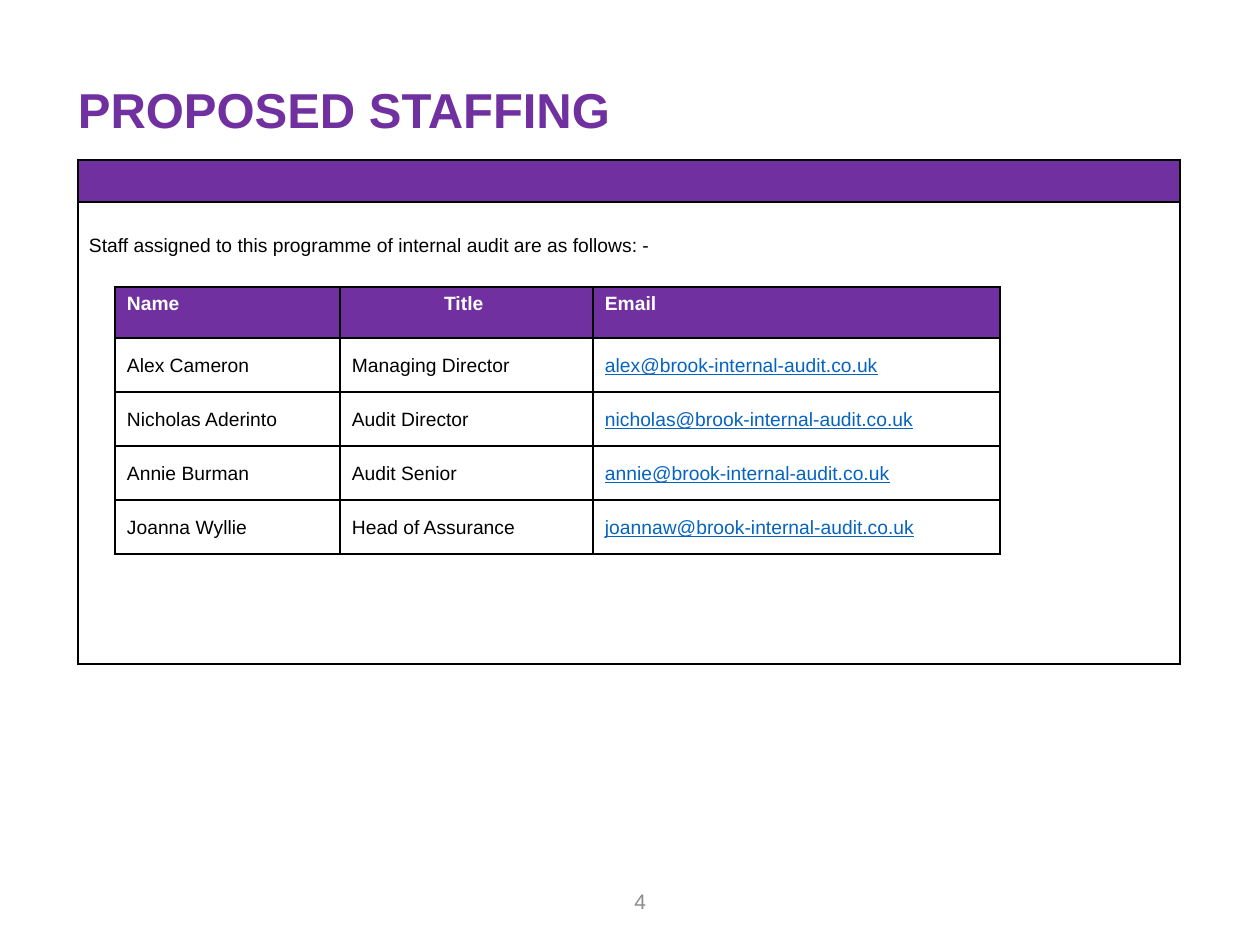
from lxml.etree import SubElement as Sub
from pptx import Presentation
from pptx.dml.color import RGBColor
from pptx.enum.text import MSO_ANCHOR as Anchor, PP_ALIGN as Align
from pptx.oxml.ns import qn
from pptx.util import Pt

SCALE = 914400 / 126
PURPLE, BLACK, WHITE = "7030A0", "000000", "FFFFFF"
GREY, BLUE = "8C8C8C", "0563C1"


def px(n):
    return round(n * SCALE)


def rgb(code):
    return RGBColor.from_string(code)


class Deck:
    font = "Arial"

    def __init__(self, wide, high):
        self.prs = Presentation()
        self.prs.slide_width, self.prs.slide_height = px(wide), px(high)
        self.slide = self.prs.slides.add_slide(self.prs.slide_layouts[6])

    def add_run(self, frame, text, size, color, bold=False, line=False,
                align=Align.LEFT, lead=1.0):
        para = frame.paragraphs[0]
        para.alignment, para.line_spacing = align, lead
        run = para.add_run()
        run.text = text
        font = run.font
        font.name, font.size, font.bold = self.font, Pt(size), bold
        font.underline = line
        font.color.rgb = rgb(color)

    def inset(self, item, x, y):
        item.margin_left = item.margin_right = px(x)
        item.margin_top = item.margin_bottom = px(y)

    def text(self, box, words, size, color, pad=(0, 0), anchor=Anchor.TOP, **look):
        frame = self.slide.shapes.add_textbox(*map(px, box)).text_frame
        frame.word_wrap = True
        frame.vertical_anchor = anchor
        self.inset(frame, *pad)
        self.add_run(frame, words, size, color, **look)

    def table(self, x, y, cols, rows):
        grid = self.slide.shapes.add_table(
            len(rows), len(cols), px(x), px(y), px(sum(cols)), px(sum(rows))).table
        grid.first_row = grid.horz_banding = False
        for col, wide in zip(grid.columns, cols):
            col.width = px(wide)
        for row, high in zip(grid.rows, rows):
            row.height = px(high)
        return grid

    def cell(self, cell, fill, pad, anchor=Anchor.TOP):
        self.inset(cell, *pad)
        cell.vertical_anchor = anchor
        props = cell._tc.get_or_add_tcPr()
        for side in ("lnL", "lnR", "lnT", "lnB"):
            edge = Sub(props, qn("a:" + side), w=str(Pt(1)))
            Sub(Sub(edge, qn("a:solidFill")), qn("a:srgbClr"), val=BLACK)
        cell.fill.solid()
        cell.fill.fore_color.rgb = rgb(fill)
        return cell.text_frame


def main():
    deck = Deck(1260, 945)

    # Title and page number
    deck.text((78, 86, 1102, 53), "PROPOSED STAFFING", 28, PURPLE,
              bold=True, lead=0.9)
    deck.text((601, 876, 57, 50), "4", 12, GREY, pad=(12, 6),
              anchor=Anchor.MIDDLE, align=Align.RIGHT)

    # Outer panel
    panel = deck.table(78, 160, [1102], [42, 462])
    deck.cell(panel.cell(0, 0), PURPLE, (0, 0))
    intro = deck.cell(panel.cell(1, 0), WHITE, (11, 33))
    deck.add_run(intro, "Staff assigned to this programme of internal audit are as follows: -",
                 11, BLACK, align=Align.JUSTIFY)

    # Staff table
    staff = [
        ("Alex Cameron", "Managing Director", "alex"),
        ("Nicholas Aderinto", "Audit Director", "nicholas"),
        ("Annie Burman", "Audit Senior", "annie"),
        ("Joanna Wyllie", "Head of Assurance", "joannaw"),
    ]
    grid = deck.table(115, 287, [225, 253, 407], [51] + [54] * len(staff))
    heads = [("Name", Align.LEFT), ("Title ", Align.CENTER), ("Email", Align.LEFT)]
    for c, (head, align) in enumerate(heads):
        frame = deck.cell(grid.cell(0, c), PURPLE, (12, 6))
        deck.add_run(frame, head, 11, WHITE, bold=True, align=align)
    for r, (name, role, user) in enumerate(staff, 1):
        mail = user + "@brook-internal-audit.co.uk"
        for c, words in enumerate((name, role, mail)):
            link = c == 2
            frame = deck.cell(grid.cell(r, c), WHITE, (12, 8), Anchor.MIDDLE)
            deck.add_run(frame, words, 11, BLUE if link else BLACK,
                         line=link, lead=1.1)

    deck.prs.save("out.pptx")


if __name__ == "__main__":
    main()
